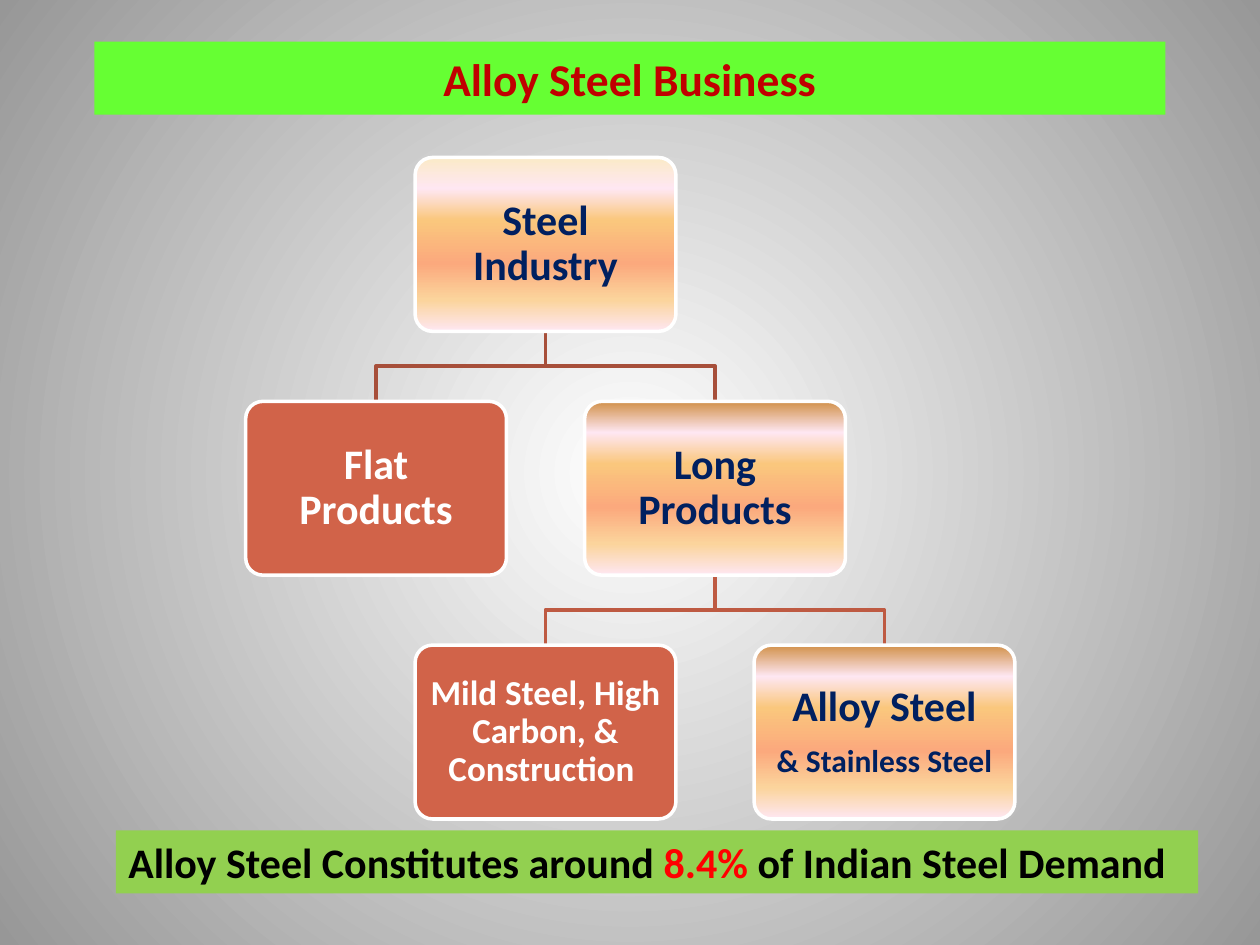
from dataclasses import dataclass

from pptx import Presentation
from pptx.dml.color import RGBColor
from pptx.enum.shapes import MSO_SHAPE
from pptx.enum.text import MSO_ANCHOR, PP_ALIGN
from pptx.oxml import parse_xml
from pptx.oxml.ns import nsdecls, qn
from pptx.util import Pt

RECT = MSO_SHAPE.RECTANGLE
ROUNDED = MSO_SHAPE.ROUNDED_RECTANGLE
MIDDLE, TOP = MSO_ANCHOR.MIDDLE, MSO_ANCHOR.TOP
LEFT, CENTER = PP_ALIGN.LEFT, PP_ALIGN.CENTER
PX = 4572
LINEAR = '<a:lin ang="5400000" scaled="0"/>'
RADIAL = ('<a:path path="circle"><a:fillToRect l="50000" t="50000" '
          'r="50000" b="50000"/></a:path>')


@dataclass(frozen=True)
class Theme:
    """Colours, type sizes and line widths of the slide."""
    font: str = "Calibri"
    title_size: int = 26
    body_size: int = 24
    detail_size: int = 20
    note_size: int = 18
    line_width: int = 2
    title_fill: str = "66FF33"
    title_text: str = "C00000"
    footer_fill: str = "92D050"
    black: str = "000000"
    white: str = "FFFFFF"
    accent: str = "FF0000"
    navy: str = "002060"
    rust: str = "D16349"
    upper_link: str = "A74F3A"
    lower_link: str = "BE5A42"
    backdrop: tuple = ((0, "FFFFFF"), (100, "979797"))
    glow: tuple = ((18, "FEE7F2"), (36, "FAC77D"), (61, "FBA97D"),
                   (82, "FBD49C"), (100, "FEE7F2"))
    cream: str = "FBEAC7"
    bronze: str = "D19049"


THEME = Theme()


def apply_format(target, values):
    """Set every attribute in values on target."""
    for name, value in values.items():
        setattr(target, name, value)


def paint_gradient(fill, holder, stops, direction):
    """Replace the fill inside holder with a gradient."""
    fill.solid()
    fill.fore_color.rgb = RGBColor.from_string(THEME.white)
    marks = "".join(f'<a:gs pos="{position * 1000}"><a:srgbClr val="{color}"/></a:gs>'
                    for position, color in stops)
    gradient = parse_xml(f'<a:gradFill {nsdecls("a")} rotWithShape="1">'
                         f'<a:gsLst>{marks}</a:gsLst>{direction}</a:gradFill>')
    holder.replace(holder.find(qn("a:solidFill")), gradient)


def add_panel(page, kind, box, fill):
    """Add a shape without outline, filled with a colour or gradient stops."""
    panel = page.shapes.add_shape(kind, *(length * PX for length in box))
    panel.shadow.inherit = False
    panel.line.fill.background()
    if isinstance(fill, str):
        panel.fill.solid()
        panel.fill.fore_color.rgb = RGBColor.from_string(fill)
    else:
        paint_gradient(panel.fill, panel.element.spPr, fill, LINEAR)
    return panel


def write_text(panel, lines, align, frame_format, para_format=None):
    """Write lines of (text, size, colour) spans into the panel."""
    frame = panel.text_frame
    apply_format(frame, frame_format)
    for index, line in enumerate(lines):
        para = frame.add_paragraph() if index else frame.paragraphs[0]
        apply_format(para, {"alignment": align, **(para_format or {})})
        if index:
            para.space_before = Pt(8.4)
        for text, size, color in line:
            span = para.add_run()
            span.text = text
            apply_format(span.font, {"name": THEME.font, "size": Pt(size), "bold": True})
            span.font.color.rgb = RGBColor.from_string(color)


def add_title(page, box):
    """Place the title banner."""
    banner = add_panel(page, RECT, box, THEME.title_fill)
    write_text(banner, [[("Alloy Steel Business", THEME.title_size, THEME.title_text)]],
               CENTER, {"vertical_anchor": MIDDLE, "word_wrap": True})


def add_footer(page, box):
    """Place the closing statement banner."""
    banner = add_panel(page, RECT, box, THEME.footer_fill)
    size = THEME.body_size
    write_text(banner, [[("Alloy Steel Constitutes around ", size, THEME.black),
                         ("8.4%", size, THEME.accent),
                         (" of Indian Steel Demand", size, THEME.black)]],
               LEFT, {"vertical_anchor": TOP, "word_wrap": False})


def add_node(page, box, fill, lines, margin):
    """Place one box of the tree."""
    node = add_panel(page, ROUNDED, box, fill)
    node.adjustments[0] = 0.1
    node.line.color.rgb = RGBColor.from_string(THEME.white)
    node.line.width = Pt(THEME.line_width)
    sides = ("margin_left", "margin_top", "margin_right", "margin_bottom")
    write_text(node, lines, CENTER,
               {"vertical_anchor": MIDDLE, "word_wrap": True,
                **{side: margin * PX for side in sides}},
               {"line_spacing": 0.9})


def add_link(page, parent, child, color):
    """Draw an elbow from the bottom of parent to the top of child."""
    start_x, end_x = (box[0] + box[2] // 2 for box in (parent, child))
    start_y, end_y = parent[1] + parent[3], child[1]
    middle_y = (start_y + end_y) // 2
    builder = page.shapes.build_freeform(start_x, start_y, PX)
    builder.add_line_segments([(start_x, middle_y), (end_x, middle_y), (end_x, end_y)],
                              close=False)
    link = builder.convert_to_shape()
    link.shadow.inherit = False
    link.fill.background()
    link.line.color.rgb = RGBColor.from_string(color)
    link.line.width = Pt(THEME.line_width)


def add_tree(page, box):
    """Place the steel industry tree in a grid of half-step columns."""
    left, top, width, height = box
    node_width, node_height = 414, 276
    column_step = (width - node_width) // 3
    row_step = (height - node_height) // 2
    body, detail, note = THEME.body_size, THEME.detail_size, THEME.note_size
    cream = ((0, THEME.cream), *THEME.glow)
    bronze = ((0, THEME.bronze), *THEME.glow)
    nodes = {
        "industry": (1, 0, cream, [[("Steel Industry", body, THEME.navy)]], 20),
        "flat": (0, 1, THEME.rust, [[("Flat Products", body, THEME.white)]], 20),
        "long": (2, 1, bronze, [[("Long Products", body, THEME.navy)]], 20),
        "mild": (1, 2, THEME.rust,
                 [[("Mild Steel, High Carbon, & Construction ", detail, THEME.white)]], 16),
        "alloy": (3, 2, bronze, [[("Alloy Steel", body, THEME.navy)],
                                 [("& Stainless Steel", note, THEME.navy)]], 20),
    }
    boxes = {name: (left + column * column_step, top + row * row_step,
                    node_width, node_height)
             for name, (column, row, *_) in nodes.items()}
    for parent, children, color in (("industry", ("flat", "long"), THEME.upper_link),
                                    ("long", ("mild", "alloy"), THEME.lower_link)):
        for child in children:
            add_link(page, boxes[parent], boxes[child], color)
    for name, (_, _, fill, lines, margin) in nodes.items():
        add_node(page, boxes[name], fill, lines, margin)


def main():
    """Build the slide and save it."""
    deck = Presentation()
    apply_format(deck, {"slide_width": 2000 * PX, "slide_height": 1500 * PX})
    page = deck.slides.add_slide(deck.slide_layouts[6])
    fill = page.background.fill
    paint_gradient(fill, page.element.find(".//" + qn("p:bgPr")), THEME.backdrop, RADIAL)
    add_title(page, (150, 66, 1700, 116))
    add_tree(page, (390, 250, 1221, 1050))
    add_footer(page, (184, 1318, 1718, 100))
    deck.save("out.pptx")


if __name__ == "__main__":
    main()
